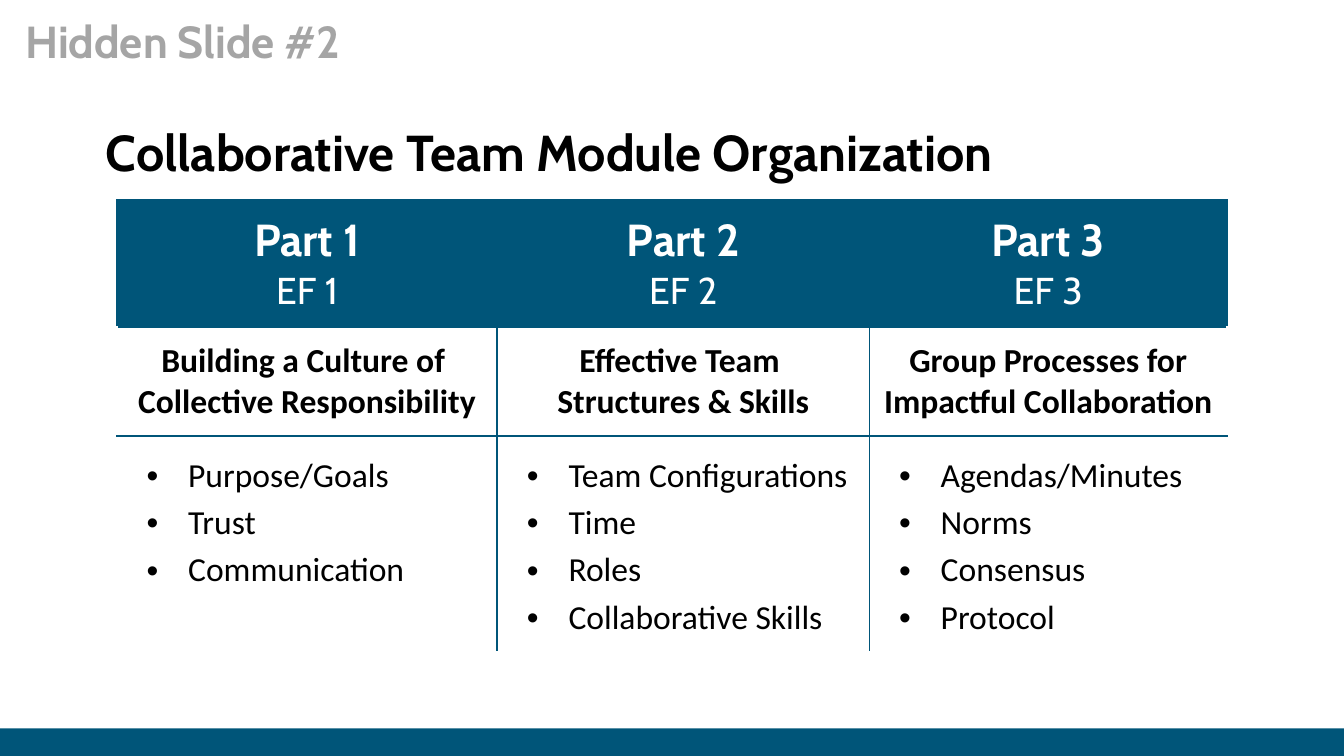
from lxml.etree import SubElement
from pptx import Presentation
from pptx.dml.color import RGBColor
from pptx.enum.shapes import MSO_SHAPE
from pptx.enum.text import MSO_ANCHOR, PP_ALIGN
from pptx.oxml.ns import qn
from pptx.util import Inches, Pt

COLORS = {"teal": "005579", "black": "000000", "white": "FFFFFF", "gray": "A5A5A5"}
COLUMN_WIDTHS = [2.83, 2.77, 2.66]
ROW_HEIGHTS = [0.92, 0.81, 1.58]
PARTS = [
    (["Part 1", "EF 1"],
     ["Building a Culture of ", "Collective Responsibility"],
     ["Purpose/Goals", "Trust", "Communication"]),
    (["Part 2", "EF 2"],
     ["Effective Team ", "Structures & Skills"],
     ["Team Configurations", "Time", "Roles", "Collaborative Skills"]),
    (["Part 3", "EF 3"],
     ["Group Processes for Impactful Collaboration "],
     ["Agendas/Minutes", "Norms", "Consensus", "Protocol"]),
]


def color(name):
    return RGBColor.from_string(COLORS[name])


def set_margins(target):
    """Give a cell or text frame the same inset on every side."""
    for side in ("left", "top", "right", "bottom"):
        setattr(target, f"margin_{side}", Inches(0.1))


def format_para(para, font, size, color_name, bold):
    for span in para.runs:
        span.font.name = font
        span.font.size = Pt(size)
        span.font.bold = bold
        span.font.color.rgb = color(color_name)


def add_heading(page, text, left, top, height, size, color_name):
    box = page.shapes.add_textbox(Inches(left), Inches(top), Inches(8.62), Inches(height))
    frame = box.text_frame
    frame.word_wrap = True
    frame.vertical_anchor = MSO_ANCHOR.TOP
    set_margins(frame)
    frame.text = text
    format_para(frame.paragraphs[0], "Cabin", size, color_name, True)


def add_footer_bar(page):
    bar = page.shapes.add_shape(
        MSO_SHAPE.RECTANGLE, 0, Inches(5.42), Inches(10), Inches(0.21))
    bar.shadow.inherit = False
    bar.fill.solid()
    bar.fill.fore_color.rgb = color("teal")
    bar.line.fill.background()


def add_borders(cell, sides):
    """Draw teal borders; sides are letters in the order L, R, T, B."""
    properties = cell._tc.get_or_add_tcPr()
    for side in sides:
        line = SubElement(properties, qn(f"a:ln{side}"), w=str(Pt(1)))
        fill = SubElement(line, qn("a:solidFill"))
        SubElement(fill, qn("a:srgbClr"), val=COLORS["teal"])


def add_bullet(para):
    para.line_spacing = 1.15
    properties = para._p.get_or_add_pPr()
    properties.set("marL", str(Inches(0.43)))
    properties.set("indent", str(Inches(-0.31)))
    bullet_color = SubElement(properties, qn("a:buClr"))
    SubElement(bullet_color, qn("a:srgbClr"), val=COLORS["black"])
    SubElement(properties, qn("a:buFont"), typeface="Arial")
    SubElement(properties, qn("a:buChar"), char="•")


def fill_header(cell, lines):
    add_borders(cell, "LRTB")
    cell.fill.solid()
    cell.fill.fore_color.rgb = color("teal")
    cell.text = "\n".join(lines)
    for para, size, bold in zip(cell.text_frame.paragraphs, (24, 20), (True, False)):
        para.alignment = PP_ALIGN.CENTER
        format_para(para, "Cabin", size, "white", bold)


def fill_topic(cell, lines, inner_sides):
    add_borders(cell, inner_sides + "TB")
    cell.fill.background()
    cell.text = "\n".join(lines)
    for para in cell.text_frame.paragraphs:
        para.alignment = PP_ALIGN.CENTER
        format_para(para, "Calibri", 18, "black", True)


def fill_list(cell, items, inner_sides):
    add_borders(cell, inner_sides + "T")
    cell.fill.background()
    cell.text = "\n".join(items)
    for para in cell.text_frame.paragraphs:
        add_bullet(para)
        format_para(para, "Calibri", 18, "black", False)


def add_module_table(page):
    table = page.shapes.add_table(
        len(ROW_HEIGHTS), len(PARTS), Inches(0.87), Inches(1.49),
        Inches(sum(COLUMN_WIDTHS)), Inches(sum(ROW_HEIGHTS))).table
    table.first_row = False
    table.horz_banding = False
    for column, width in zip(table.columns, COLUMN_WIDTHS):
        column.width = Inches(width)
    for row, height in zip(table.rows, ROW_HEIGHTS):
        row.height = Inches(height)
    for cell in table.iter_cells():
        set_margins(cell)
    for index, (header, topic, items) in enumerate(PARTS):
        inner_sides = ("R", "LR", "L")[index]
        fill_header(table.cell(0, index), header)
        fill_topic(table.cell(1, index), topic, inner_sides)
        fill_list(table.cell(2, index), items, inner_sides)


def main():
    deck = Presentation()
    deck.slide_width = Inches(10)
    deck.slide_height = Inches(10) * 9 // 16
    page = deck.slides.add_slide(deck.slide_layouts[6])
    add_footer_bar(page)
    add_module_table(page)
    add_heading(page, "Collaborative Team Module Organization", 0.69, 0.8, 0.71, 27, "black")
    add_heading(page, "Hidden Slide #2", 0.09, 0, 0.67, 24, "gray")
    deck.save("out.pptx")


if __name__ == "__main__":
    main()
